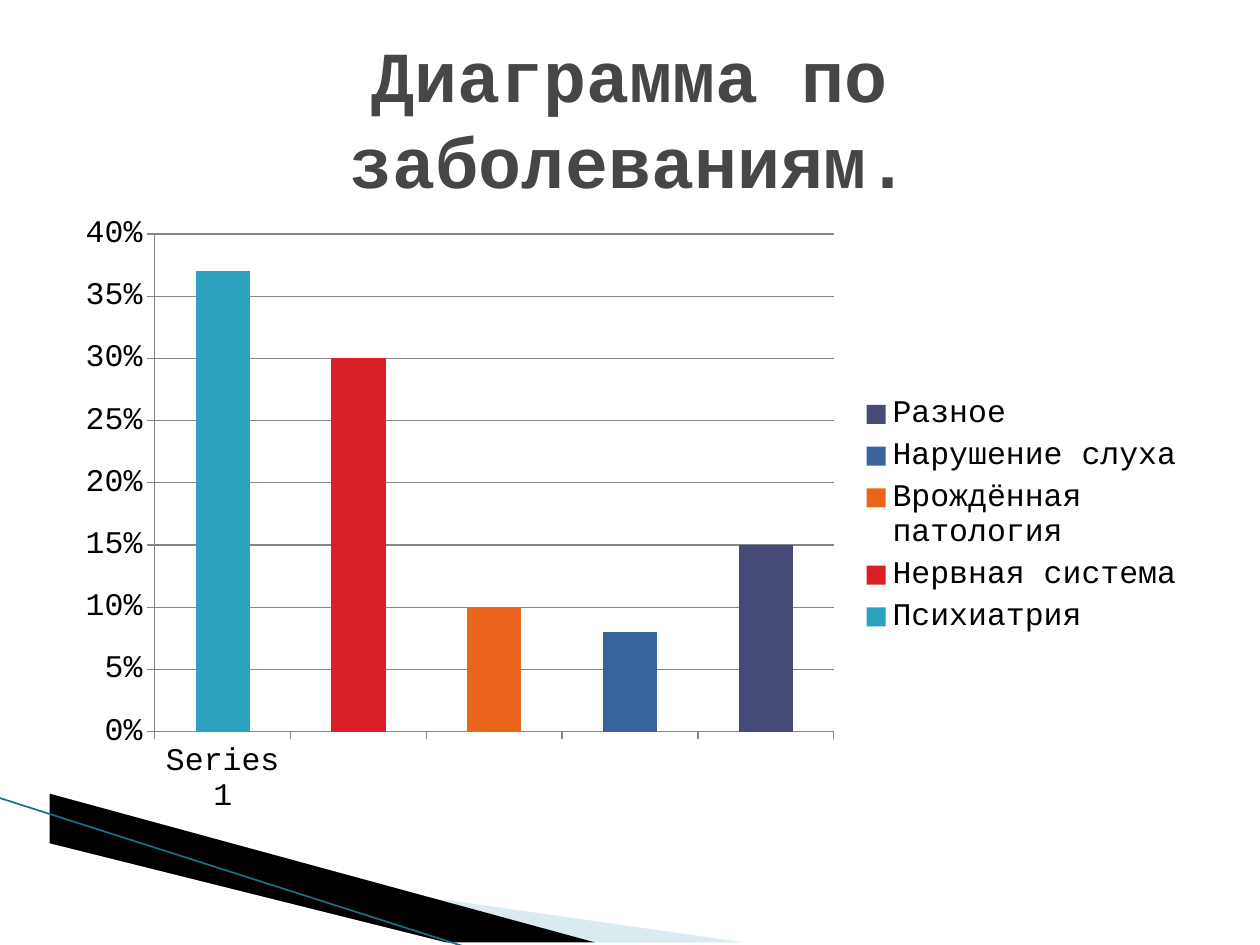
"""Build a slide with a stacked column chart of diseases by group."""
from dataclasses import dataclass
from typing import Any

from lxml.etree import SubElement
from pptx import Presentation
from pptx.chart.data import CategoryChartData
from pptx.dml.color import RGBColor
from pptx.enum.chart import XL_CHART_TYPE as ChartType
from pptx.enum.chart import XL_LEGEND_POSITION as LegendPosition
from pptx.enum.chart import XL_TICK_MARK as TickMark
from pptx.enum.shapes import MSO_CONNECTOR as Connector
from pptx.enum.text import MSO_ANCHOR as Anchor
from pptx.enum.text import PP_ALIGN as Align
from pptx.oxml.ns import qn
from pptx.slide import Slide
from pptx.util import Cm, Pt

FONT = "Courier New"
COLORS = {
    "title": "464646",
    "text": "000000",
    "grid": "868686",
    "pale": "A0CBDC",
    "dark": "000000",
    "edge": "1A7085",
    "teal": "2DA2BF",
    "red": "DA1F28",
    "orange": "EB641B",
    "blue": "39639D",
    "violet": "474B78",
}


@dataclass(frozen=True)
class Wedge:
    """A decorative corner wedge with points in centimetres."""
    points: tuple[tuple[float, float], ...]
    color: str
    opacity: int = 100


@dataclass(frozen=True)
class Disease:
    """A disease group with its share and column colour."""
    name: str
    share: float
    color: str


WEDGES = (
    Wedge(((1.4, 16.54), (15.11, 19.08), (11.58, 19.08), (1.4, 16.51)), "pale", 40),
    Wedge(((1.35, 16.48), (11.61, 19.08), (9.45, 19.1), (1.37, 16.51)), "dark"),
)
DISEASES = (
    Disease("Психиатрия", 0.37, "teal"),
    Disease("Нервная система", 0.3, "red"),
    Disease("Врождённая патология", 0.1, "orange"),
    Disease("Нарушение слуха", 0.08, "blue"),
    Disease("Разное", 0.15, "violet"),
)


def rgb(name: str) -> RGBColor:
    """Return the named colour."""
    return RGBColor.from_string(COLORS[name])


def apply_format(target: Any, values: dict[str, Any]) -> None:
    """Set every attribute in the dict on the target."""
    for name, value in values.items():
        setattr(target, name, value)


def set_font(font: Any, size: float, color: str, bold: bool = False) -> None:
    """Give a font its face, size, weight and colour."""
    apply_format(font, {"name": FONT, "size": Pt(size), "bold": bold})
    font.color.rgb = rgb(color)


def draw_wedge(slide: Slide, wedge: Wedge) -> None:
    """Draw one filled wedge."""
    start, *rest = wedge.points
    builder = slide.shapes.build_freeform(*start, scale=Cm(1))
    builder.add_line_segments(rest, close=True)
    shape = builder.convert_to_shape()
    shape.shadow.inherit = False
    shape.line.fill.background()
    shape.fill.solid()
    shape.fill.fore_color.rgb = rgb(wedge.color)
    if wedge.opacity < 100:
        color = shape.fill._xPr.find(f".//{qn('a:srgbClr')}")
        SubElement(color, qn("a:alpha")).set("val", str(wedge.opacity * 1000))


def draw_edge(slide: Slide) -> None:
    """Draw the thin line along the wedges."""
    line = slide.shapes.add_connector(
        Connector.STRAIGHT, Cm(-0.03), Cm(16.08), Cm(9.42), Cm(19.1))
    line.line.width = Pt(0.95)
    line.line.color.rgb = rgb("edge")
    SubElement(line._element.spPr, qn("a:effectLst"))


def draw_chart(slide: Slide) -> None:
    """Draw the columns, one series for each disease group."""
    data = CategoryChartData(number_format="0%")
    data.categories = ["Series 1"] + [""] * (len(DISEASES) - 1)
    for index, disease in enumerate(DISEASES):
        shares = [None] * len(DISEASES)
        shares[index] = disease.share
        data.add_series(disease.name, shares)
    chart = slide.shapes.add_chart(
        ChartType.COLUMN_STACKED, Cm(1.27), Cm(4.11), Cm(22.86), Cm(12.57), data).chart
    apply_format(chart, {"has_title": False, "has_legend": True})
    set_font(chart.font, 18, "text")
    apply_format(chart.legend, {"position": LegendPosition.RIGHT, "include_in_layout": False})
    plot = chart.plots[0]
    apply_format(plot, {"gap_width": 150, "overlap": 100, "vary_by_categories": False})
    for series, disease in zip(plot.series, DISEASES):
        series.format.fill.solid()
        series.format.fill.fore_color.rgb = rgb(disease.color)
    value_axis = chart.value_axis
    apply_format(value_axis, {
        "minimum_scale": 0, "maximum_scale": 0.4, "major_unit": 0.05,
        "has_major_gridlines": True})
    for axis in (value_axis, chart.category_axis):
        axis.major_tick_mark = TickMark.OUTSIDE
    for part in (value_axis, chart.category_axis, value_axis.major_gridlines):
        part.format.line.width = Pt(0.75)
        part.format.line.color.rgb = rgb("grid")


def draw_title(slide: Slide) -> None:
    """Write the slide title."""
    frame = slide.shapes.add_textbox(Cm(1.27), Cm(0.76), Cm(22.86), Cm(3.18)).text_frame
    apply_format(frame, {"word_wrap": True, "vertical_anchor": Anchor.MIDDLE})
    paragraph = frame.paragraphs[0]
    apply_format(paragraph, {"text": "Диаграмма по заболеваниям.", "alignment": Align.CENTER})
    set_font(paragraph.runs[0].font, 41, "title", bold=True)


def main() -> None:
    """Build and save the presentation."""
    presentation = Presentation()
    apply_format(presentation, {"slide_width": Cm(25.4), "slide_height": Cm(19.05)})
    slide = presentation.slides.add_slide(presentation.slide_layouts[6])
    for wedge in WEDGES:
        draw_wedge(slide, wedge)
    draw_edge(slide)
    draw_chart(slide)
    draw_title(slide)
    presentation.save("out.pptx")


if __name__ == "__main__":
    main()
